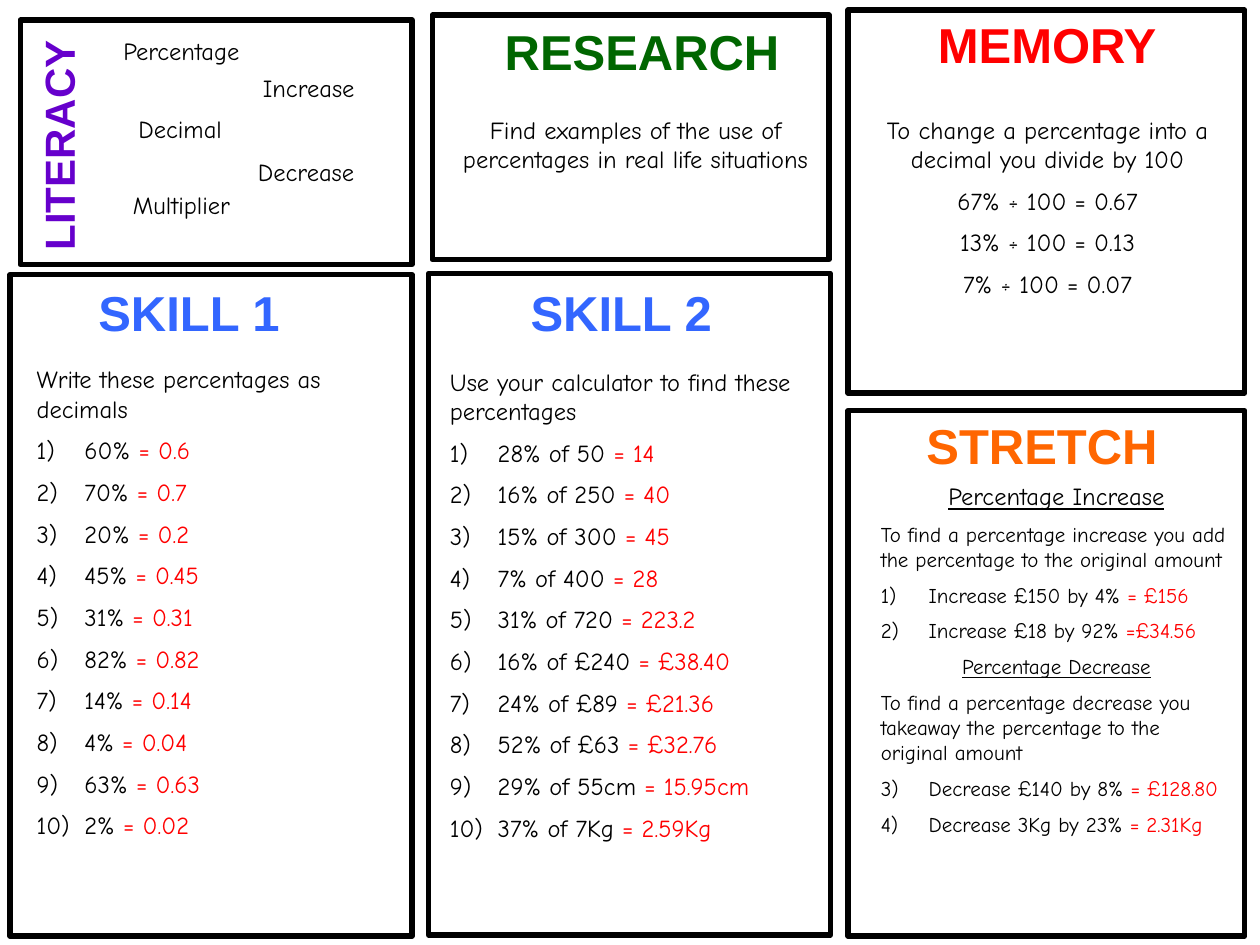
"""Builds a one-slide percentages worksheet with six framed panels."""
from dataclasses import dataclass

from lxml.etree import SubElement
from pptx import Presentation
from pptx.dml.color import RGBColor
from pptx.enum.shapes import MSO_SHAPE
from pptx.enum.text import MSO_ANCHOR, MSO_AUTO_SIZE as AutoSize, PP_ALIGN as Align
from pptx.oxml.ns import qn
from pptx.util import Emu, Pt

SCALE = 9144
LAYOUT_COMPARISON = 4


@dataclass(frozen=True)
class Theme:
    ink: str = "000000"
    answer: str = "FF0000"
    literacy: str = "6600CC"
    research: str = "006600"
    memory: str = "FF0000"
    skill: str = "3366FF"
    stretch: str = "FF6600"
    heading_font: str = "Arial"
    body_font: str = "Comic Neue"
    heading: int = 28
    side_heading: int = 24
    body: int = 14
    small: int = 12
    border: int = 3
    hanging: int = 38


@dataclass(frozen=True)
class Line:
    text: str
    size: int
    align: Align = Align.LEFT
    underline: bool = False
    start: int = 0


class Worksheet:
    def __init__(self, slide, theme):
        self.slide = slide
        self.theme = theme

    def place(self, shape, box):
        shape.left, shape.top, shape.width, shape.height = (Emu(n * SCALE) for n in box)

    def frame(self, box):
        shape = self.slide.shapes.add_shape(MSO_SHAPE.RECTANGLE, *(Emu(n * SCALE) for n in box))
        shape.shadow.inherit = False
        shape.fill.background()
        shape.line.color.rgb = RGBColor.from_string(self.theme.ink)
        shape.line.width = Pt(self.theme.border)

    def text_frame(self, box, placeholder=None, wrap=True):
        if placeholder is None:
            shape = self.slide.shapes.add_textbox(0, 0, 0, 0)
        else:
            shape = self.slide.placeholders[placeholder]
        self.place(shape, box)
        frame = shape.text_frame
        frame.word_wrap = wrap
        frame.auto_size = AutoSize.SHAPE_TO_FIT_TEXT
        frame.vertical_anchor = MSO_ANCHOR.TOP
        return shape, frame

    def run(self, paragraph, text, font, size, color, bold=False, underline=False):
        run = paragraph.add_run()
        run.text = text
        run.font.name = font
        run.font.size = Pt(size)
        run.font.bold = bold
        run.font.underline = underline
        run.font.color.rgb = RGBColor.from_string(color)

    def heading(self, text, box, color):
        _, frame = self.text_frame(box)
        paragraph = frame.paragraphs[0]
        paragraph.alignment = Align.CENTER
        self.run(paragraph, text, self.theme.heading_font, self.theme.heading, color, bold=True)

    def side_title(self, text, box, color):
        shape, frame = self.text_frame(box, placeholder=0, wrap=False)
        shape.rotation = 270
        paragraph = frame.paragraphs[0]
        paragraph.alignment = Align.CENTER
        self.run(paragraph, text, self.theme.heading_font, self.theme.side_heading, color, bold=True)

    def lines(self, lines, box, placeholder=None):
        _, frame = self.text_frame(box, placeholder)
        for position, line in enumerate(lines):
            paragraph = frame.add_paragraph() if position else frame.paragraphs[0]
            self.bullet(paragraph, line.start)
            paragraph.alignment = line.align
            paragraph.space_before = Pt(line.size / 2 if position else 0)
            question, sign, answer = line.text.partition("=") if line.start else (line.text, "", "")
            self.run(paragraph, question, self.theme.body_font, line.size, self.theme.ink,
                     underline=line.underline)
            if sign:
                self.run(paragraph, sign + answer, self.theme.body_font, line.size, self.theme.answer)

    def bullet(self, paragraph, start):
        properties = paragraph._p.get_or_add_pPr()
        hanging = self.theme.hanging * SCALE if start else 0
        properties.set("marL", str(hanging))
        properties.set("indent", str(-hanging))
        if not start:
            SubElement(properties, qn("a:buNone"))
            return
        number = SubElement(properties, qn("a:buAutoNum"), type="arabicParenR")
        if start > 1:
            number.set("startAt", str(start))


def numbered(texts, size, start=1):
    return [Line(text, size, start=start) for text in texts]


def main():
    theme = Theme()
    presentation = Presentation()
    presentation.slide_width, presentation.slide_height = Emu(1000 * SCALE), Emu(750 * SCALE)
    slide = presentation.slides.add_slide(presentation.slide_layouts[LAYOUT_COMPARISON])
    sheet = Worksheet(slide, theme)

    for box in ((16, 16, 311, 194), (8, 218, 319, 525), (673, 326, 315, 417),
                (343, 12, 315, 194), (673, 8, 315, 304), (340, 217, 319, 525)):
        sheet.frame(box)

    sheet.side_title("LITERACY", (-48, 90, 189, 51), theme.literacy)
    for text, left, top, width, color in (
        ("RESEARCH", 389, 12, 241, theme.research),
        ("MEMORY", 727, 7, 208, theme.memory),
        ("SKILL 1", 46, 219, 208, theme.skill),
        ("SKILL 2", 389, 219, 208, theme.skill),
        ("STRETCH", 723, 325, 208, theme.stretch),
    ):
        sheet.heading(text, (left, top, width, 57), color)

    for word, left, top in (("Percentage", 69, 24), ("Increase", 170, 53), ("Decimal", 68, 86),
                            ("Decrease", 168, 120), ("Multiplier", 69, 146)):
        sheet.lines([Line(word, theme.body, Align.CENTER)], (left, top, 150, 34))

    research = "Find examples of the use of percentages in real life situations"
    sheet.lines([Line(research, theme.body, Align.CENTER)], (355, 86, 299, 81))

    memory = ("To change a percentage into a decimal you divide by 100",
              "67% ÷ 100 = 0.67", "13% ÷ 100 = 0.13", "7% ÷ 100 = 0.07")
    sheet.lines([Line(text, theme.body, Align.CENTER) for text in memory],
                (682, 86, 299, 163), placeholder=3)

    decimals = ("60% = 0.6", "70% = 0.7", "20% = 0.2", "45% = 0.45", "31% = 0.31",
                "82% = 0.82", "14% = 0.14", "4% = 0.04", "63% = 0.63", "2% = 0.02")
    sheet.lines([Line("Write these percentages as decimals", theme.body),
                 *numbered(decimals, theme.body)], (19, 284, 291, 411), placeholder=2)

    amounts = ("28% of 50 = 14", "16% of 250 = 40", "15% of 300 = 45", "7% of 400 = 28",
               "31% of 720 = 223.2", "16% of £240 = £38.40", "24% of £89 = £21.36",
               "52% of £63 = £32.76", "29% of 55cm = 15.95cm", "37% of 7Kg = 2.59Kg")
    sheet.lines([Line("Use your calculator to find these percentages", theme.body),
                 *numbered(amounts, theme.body)], (347, 286, 291, 411), placeholder=4)

    increases = ("Increase £150 by 4% = £156", "Increase £18 by 92% =£34.56")
    decreases = ("Decrease £140 by 8% = £128.80", "Decrease 3Kg by 23% = 2.31Kg")
    sheet.lines([
        Line("Percentage Increase", theme.body, Align.CENTER, underline=True),
        Line("To find a percentage increase you add the percentage to the original amount",
             theme.small),
        *numbered(increases, theme.small),
        Line("Percentage Decrease", theme.small, Align.CENTER, underline=True),
        Line("To find a percentage decrease you takeaway the percentage to the original amount",
             theme.small),
        *numbered(decreases, theme.small, start=3),
    ], (689, 377, 299, 366), placeholder=1)

    presentation.save("out.pptx")


if __name__ == "__main__":
    main()
